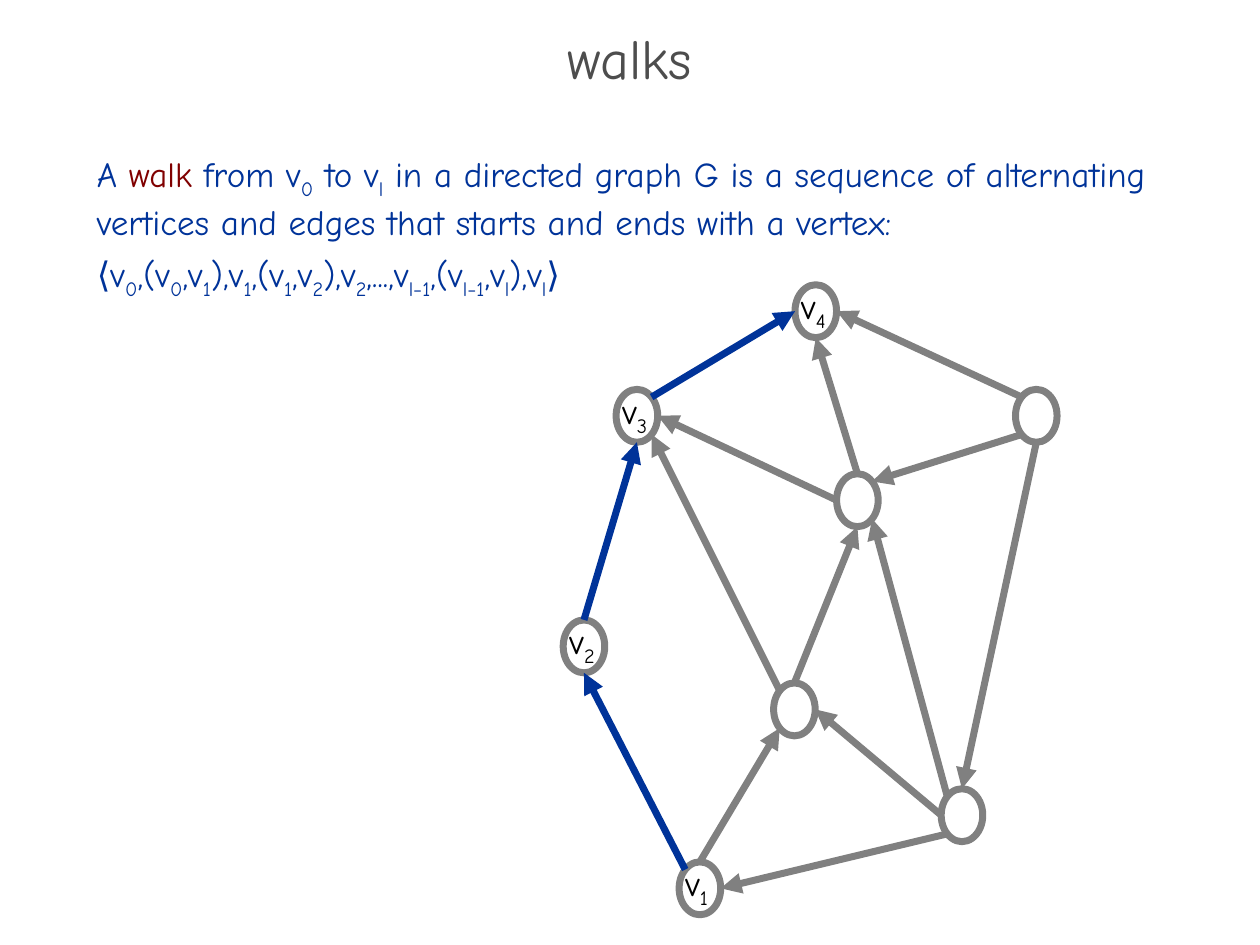
from math import sqrt

from lxml.etree import SubElement
from pptx import Presentation
from pptx.dml.color import RGBColor
from pptx.enum.shapes import MSO_CONNECTOR, MSO_SHAPE
from pptx.enum.text import MSO_ANCHOR, PP_ALIGN
from pptx.oxml.ns import qn
from pptx.util import Inches, Pt

FONT = "Comic Neue"
COLORS = {"title": "4D4D4D", "blue": "003399", "term": "800000",
          "gray": "808080", "white": "FFFFFF", "black": "000000"}

# In texts, |...| marks a subscript and *...* the defined term.
TITLE = "walks"
BODY = [
    "A *walk* from v|0| to v|l| in a directed graph G is a sequence of "
    "alternating vertices and edges that starts and ends with a vertex:",
    "⟨v|0|,(v|0|,v|1|),v|1|,(v|1|,v|2|),v|2|,...,v|l−1|,(v|l−1|,v|l|),v|l|⟩",
]

# Left and top of each vertex
NODES = {
    "v4": (6.31, 2.26), "v3": (4.89, 3.09), "center": (6.64, 3.76),
    "lower": (6.14, 5.42), "v2": (4.47, 4.92), "right": (8.06, 3.09),
    "v1": (5.39, 6.84), "bottom": (7.47, 6.26),
}
NODE_W, NODE_H = 0.33, 0.42
LABELED = ["v1", "v2", "v3", "v4"]

# Source, side it leaves; target, side it enters
WALK_EDGES = [
    ("v3", "NE", "v4", "W"), ("v2", "N", "v3", "S"), ("v1", "NW", "v2", "S"),
]
OTHER_EDGES = [
    ("bottom", "SW", "v1", "E"), ("right", "NW", "v4", "E"),
    ("center", "N", "v4", "S"), ("center", "W", "v3", "E"),
    ("lower", "NW", "v3", "SE"), ("lower", "N", "center", "S"),
    ("v1", "N", "lower", "SW"), ("right", "SW", "center", "NE"),
    ("bottom", "W", "lower", "E"), ("right", "S", "bottom", "N"),
    ("bottom", "NW", "center", "SE"),
]


def rgb(name):
    return RGBColor.from_string(COLORS[name])


def add_text(s, box, paragraphs, size=20, color="black", align=PP_ALIGN.LEFT,
             anchor=MSO_ANCHOR.TOP, wrap=True, after=0, spacing=None):
    tf = s.shapes.add_textbox(*map(Inches, box)).text_frame
    tf.word_wrap = wrap
    tf.vertical_anchor = anchor
    for i, text in enumerate(paragraphs):
        p = tf.add_paragraph() if i else tf.paragraphs[0]
        p.alignment = align
        p.space_after = Pt(after)
        if spacing:
            p.line_spacing = spacing
        for j, piece in enumerate(text.split("*")):
            for k, part in enumerate(piece.split("|")):
                if not part:
                    continue
                r = p.add_run()
                r.text = part
                r.font.name = FONT
                r.font.size = Pt(size)
                r.font.color.rgb = rgb("term" if j % 2 else color)
                if k % 2:
                    r.font._element.set("baseline", "-25000")


def add_node(s, left, top):
    sp = s.shapes.add_shape(MSO_SHAPE.OVAL, Inches(left), Inches(top),
                            Inches(NODE_W), Inches(NODE_H))
    sp.shadow.inherit = False
    sp.fill.solid()
    sp.fill.fore_color.rgb = rgb("white")
    sp.line.color.rgb = rgb("gray")
    sp.line.width = Pt(4)


def rim_point(node, side):
    """Point on the node's ellipse in a compass direction."""
    left, top = NODES[node]
    dx = ("E" in side) - ("W" in side)
    dy = ("S" in side) - ("N" in side)
    reach = 1 / sqrt(len(side))
    return (Inches(left + NODE_W / 2 * (1 + dx * reach)),
            Inches(top + NODE_H / 2 * (1 + dy * reach)))


def add_edge(s, source, leave, target, enter, color):
    line = s.shapes.add_connector(MSO_CONNECTOR.STRAIGHT,
                                  *rim_point(source, leave),
                                  *rim_point(target, enter))
    line.line.color.rgb = rgb(color)
    line.line.width = Pt(4)
    SubElement(line.line._get_or_add_ln(), qn("a:tailEnd"), type="triangle")
    SubElement(line._element.spPr, qn("a:effectLst"))


def main():
    prs = Presentation()
    prs.slide_width, prs.slide_height = Inches(10), Inches(7.5)
    s = prs.slides.add_slide(prs.slide_layouts[6])

    add_text(s, (0, 0.27, 10, 0.5), [TITLE], size=32, color="title",
             align=PP_ALIGN.CENTER, anchor=MSO_ANCHOR.MIDDLE, spacing=0.7)
    add_text(s, (0.67, 1.16, 8.58, 5.92), BODY, color="blue", after=6)

    for left, top in NODES.values():
        add_node(s, left, top)
    for edges, color in ((WALK_EDGES, "blue"), (OTHER_EDGES, "gray")):
        for edge in edges:
            add_edge(s, *edge, color)
    for name in LABELED:
        left, top = NODES[name]
        add_text(s, (left - 0.05, top - 0.05, 0.45, 0.44),
                 [f"v|{name[1]}|"], wrap=False)

    prs.save("out.pptx")


if __name__ == "__main__":
    main()
